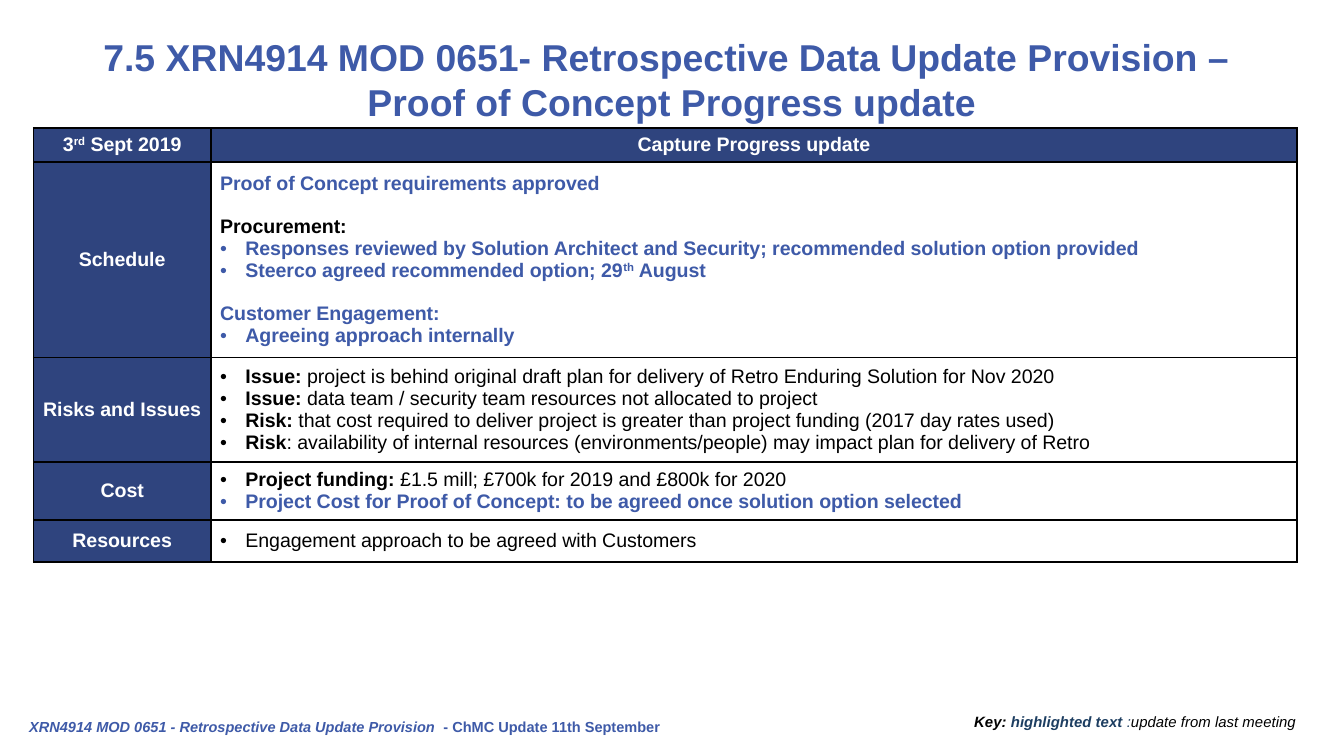
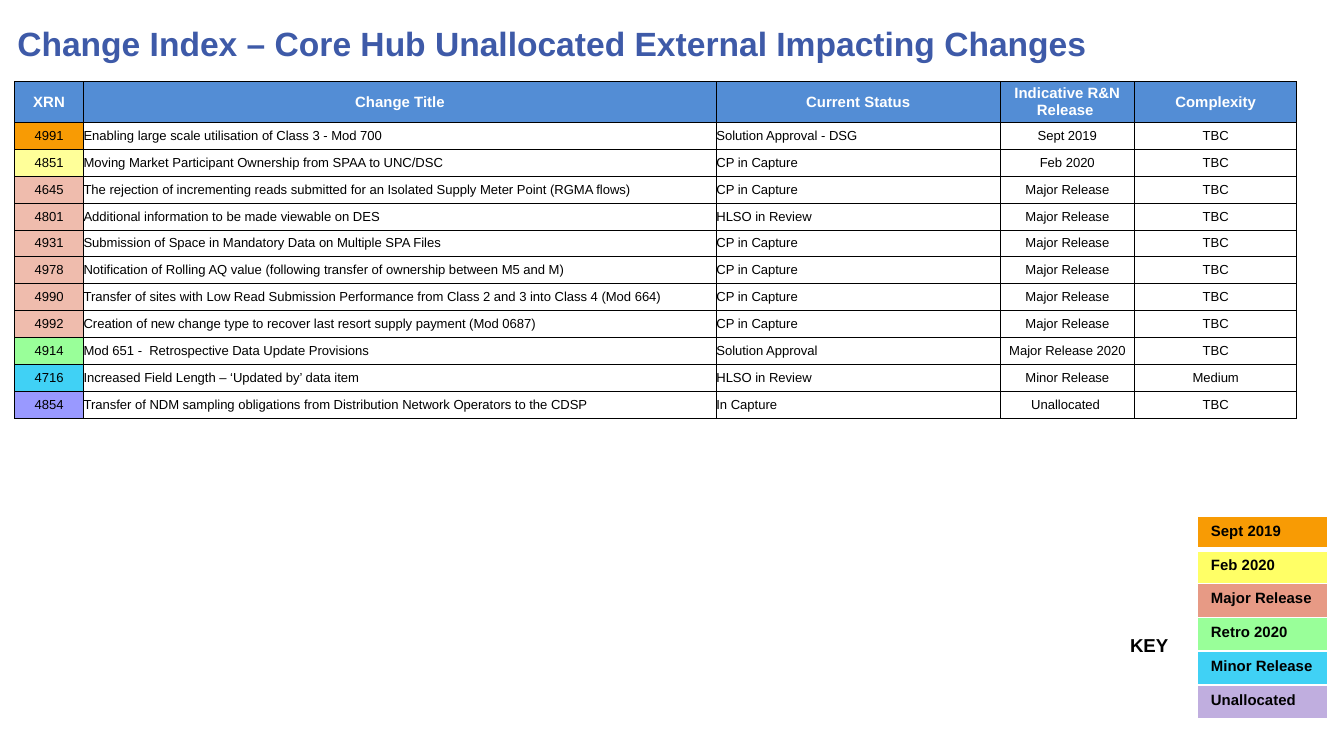
from lxml.etree import SubElement
from pptx import Presentation
from pptx.dml.color import RGBColor
from pptx.enum.text import MSO_ANCHOR, PP_ALIGN
from pptx.oxml.ns import qn
from pptx.util import Pt

hue = RGBColor.from_string
BLUE, NAVY, SKY = "3E5AA8", "2F447E", "538DD5"
BLACK, WHITE = "000000", "FFFFFF"
MID, TOP, LEFT = MSO_ANCHOR.MIDDLE, MSO_ANCHOR.TOP, PP_ALIGN.LEFT
CENTER = PP_ALIGN.CENTER
BOLD, SUP = {"bold": True}, {"sup": True}


def write(frame, runs, size, tint=BLACK, bold=None, align=LEFT, italic=None,
          bullet=False, gap=0):
    """Add a paragraph; runs is a string or a list of (text, style) pairs."""
    para = frame.add_paragraph() if frame.text else frame.paragraphs[0]
    para.alignment = align
    if gap:
        para.space_before = Pt(gap)
    if bullet:
        props = para._p.get_or_add_pPr()
        props.set("marL", str(Pt(13.5)))
        props.set("indent", str(Pt(-13.5)))
        SubElement(props, qn("a:buFont")).set("typeface", "Arial")
        SubElement(props, qn("a:buChar")).set("char", "•")
    font = para.font
    font.name, font.size = "Arial", Pt(size)
    font.bold, font.italic = bold, italic
    font.color.rgb = hue(tint)
    for text, style in [(runs, {})] if isinstance(runs, str) else runs:
        if text == "\n":
            para.add_line_break()
            continue
        run = para.add_run()
        run.text = text
        if "bold" in style:
            run.font.bold = style["bold"]
        if "italic" in style:
            run.font.italic = style["italic"]
        if "tint" in style:
            run.font.color.rgb = hue(style["tint"])
        if "sup" in style:
            run._r.get_or_add_rPr().set("baseline", "30000")


def grid(slide, left, top, cols, rows, line, width, pads, anchor):
    """Add an unfilled table with even borders; pads are side and top margins."""
    table = slide.shapes.add_table(len(rows), len(cols), Pt(left), Pt(top),
                                   Pt(sum(cols)), Pt(sum(rows))).table
    table.first_row = table.horz_banding = False
    for col, size in zip(table.columns, cols):
        col.width = Pt(size)
    for row, size in zip(table.rows, rows):
        row.height = Pt(size)
    for cell in table.iter_cells():
        cell.margin_left = cell.margin_right = Pt(pads[0])
        cell.margin_top = cell.margin_bottom = Pt(pads[1])
        cell.vertical_anchor = anchor
        props = cell._tc.get_or_add_tcPr()
        for side in ("a:lnL", "a:lnR", "a:lnT", "a:lnB"):
            edge = SubElement(props, qn(side), w=str(Pt(width)))
            fill = SubElement(edge, qn("a:solidFill"))
            SubElement(fill, qn("a:srgbClr")).set("val", line)
        cell.fill.background()
    return table


deck = Presentation()
deck.slide_width, deck.slide_height = Pt(720), Pt(405)
blank = deck.slide_layouts[6]
update, index = [deck.slides.add_slide(blank) for _ in range(2)]

# Titles, footers and labels: slide, place, anchor, wrap, runs, font
boxes = [
    (update, (36, 15, 648, 50.4), TOP, True,
     [("7.5 XRN4914 MOD 0651- Retrospective Data Update Provision – ", {}),
      ("\n", {}), ("Proof of Concept Progress update", {})],
     dict(size=20, tint=BLUE, bold=True, align=CENTER)),
    (update, (8.6, 378, 648, 22.3), MID, True,
     [("XRN4914 MOD 0651 - Retrospective Data Update Provision",
       {"italic": True}),
      ("  - ChMC Update 11th September", {})],
     dict(size=7.8, tint=BLUE, bold=True)),
    (update, (514.8, 378, 188.6, 17.3), TOP, False,
     [("Key: ", BOLD), ("highlighted text ", {"bold": True, "tint": "1D3E61"}),
      (":", {"tint": "1D3E61"}), ("update from last meeting", {})],
     dict(size=8, italic=True)),
    (index, (2.2, 2.2, 684, 41.8), MID, True,
     "Change Index – Core Hub Unallocated External Impacting Changes",
     dict(size=18, tint=BLUE, bold=True)),
    (index, (598.3, 336.2, 56.9, 19.4), TOP, True, "KEY",
     dict(size=10, bold=True)),
]
for slide, place, anchor, wrap, runs, font in boxes:
    frame = slide.shapes.add_textbox(*map(Pt, place)).text_frame
    frame.word_wrap, frame.vertical_anchor = wrap, anchor
    write(frame, runs, **font)

# Progress table: row label, then (runs, font) for each paragraph
news = dict(tint=BLUE, bold=True)
point = dict(bullet=True)
fresh = dict(news, bullet=True)
status = [
    ([("3", {}), ("rd", SUP), (" Sept 2019", {})],
     [("Capture Progress update", dict(tint=WHITE, bold=True, align=CENTER))]),
    ("Schedule", [
        ("Proof of Concept requirements approved", news),
        ("Procurement:", dict(bold=True, gap=11.6)),
        ("Responses reviewed by Solution Architect and Security; "
         "recommended solution option provided", fresh),
        ([("Steerco agreed recommended option; 29", {}), ("th", SUP),
          (" August", {})], fresh),
        ("Customer Engagement:", dict(news, gap=11.6)),
        ("Agreeing approach internally", fresh)]),
    ("Risks and Issues", [
        ([("Issue: ", BOLD), ("project is behind original draft plan for "
          "delivery of Retro Enduring Solution for Nov 2020", {})], point),
        ([("Issue: ", BOLD), ("data team / security team resources not "
          "allocated to project", {})], point),
        ([("Risk: ", BOLD), ("that cost required to deliver project is greater "
          "than project funding (2017 day rates used)", {})], point),
        ([("Risk", BOLD), (": availability of internal resources "
          "(environments/people) may impact plan for delivery of Retro", {})],
         point)]),
    ("Cost", [
        ([("Project funding: ", BOLD),
          ("£1.5 mill; £700k for 2019 and £800k for 2020", {})], point),
        ("Project Cost for Proof of Concept: to be agreed once solution "
         "option selected", fresh)]),
    ("Resources", [
        ("Engagement approach to be agreed with Customers", point)]),
]
table = grid(update, 18, 68.5, [95, 582], [17, 98, 52, 28.5, 22.5],
             BLACK, 1, (5, 2.9), MID)
for num, (label, paras) in enumerate(status):
    head, body = table.cell(num, 0), table.cell(num, 1)
    for cell in [head, body] if num == 0 else [head]:
        cell.fill.solid()
        cell.fill.fore_color.rgb = hue(NAVY)
    write(head.text_frame, label, 10.5, WHITE, True, CENTER)
    for runs, font in paras:
        write(body.text_frame, runs, 10.5, **font)

# Change table: the number's fill follows the release
tints = {"Sept 2019": "F89B04", "Feb 2020": "FFFF99", "Major Release": "EFBCAD",
         "Major Release 2020": "99FF99", "Minor Release": "40D1F5",
         "Unallocated": "9999FF"}
changes = [
    ("XRN", "Change Title", "Current Status", "Indicative R&N Release ",
     "Complexity"),
    ("4991", "Enabling large scale utilisation of Class 3 - Mod 700",
     "Solution Approval - DSG", "Sept 2019", "TBC"),
    ("4851", "Moving Market Participant Ownership from SPAA to UNC/DSC",
     "CP in Capture", "Feb 2020", "TBC"),
    ("4645", "The rejection of incrementing reads submitted for an Isolated "
     "Supply Meter Point (RGMA flows)",
     "CP in Capture", "Major Release", "TBC"),
    ("4801", "Additional information to be made viewable on DES",
     "HLSO in Review", "Major Release", "TBC"),
    ("4931", "Submission of Space in Mandatory Data on Multiple SPA Files",
     "CP in Capture", "Major Release", "TBC"),
    ("4978", "Notification of Rolling AQ value (following transfer of "
     "ownership between M5 and M)",
     "CP in Capture", "Major Release", "TBC"),
    ("4990", "Transfer of sites with Low Read Submission Performance from "
     "Class 2 and 3 into Class 4 (Mod 664)",
     "CP in Capture", "Major Release", "TBC"),
    ("4992", "Creation of new change type to recover last resort supply "
     "payment (Mod 0687)", "CP in Capture", "Major Release", "TBC"),
    ("4914", "Mod 651 -  Retrospective Data Update Provisions",
     "Solution Approval", "Major Release 2020", "TBC"),
    ("4716", "Increased Field Length – ‘Updated by’ data item",
     "HLSO in Review", "Minor Release", "Medium"),
    ("4854", "Transfer of NDM sampling obligations from Distribution Network "
     "Operators to the CDSP", "In Capture", "Unallocated ", "TBC"),
]
table = grid(index, 7.8, 43.8, [37, 339, 152, 72, 87], [21.8] + [14.4] * 11,
             BLACK, 0.5, (0, 0), MID)
for num, change in enumerate(changes):
    for col, text in enumerate(change):
        cell = table.cell(num, col)
        if num == 0 or col == 0:
            cell.fill.solid()
            cell.fill.fore_color.rgb = hue(tints[change[3].strip()] if num
                                           else SKY)
        if num == 0:
            write(cell.text_frame, text, 8, WHITE, True, CENTER)
        else:
            write(cell.text_frame, text, 7,
                  align=LEFT if col in (1, 2) else CENTER)

# Colour key
keys = [("Sept 2019", "F89B04"), ("Feb 2020", "FFFF66"),
        ("Major Release", "E79A85"), ("Retro 2020", "99FF99"),
        ("Minor Release", "40D1F5"), ("Unallocated", "C0AEDF")]
table = grid(index, 641.5, 276.5, [70], [18.1] * 6, WHITE, 1, (7.2, 3.6), TOP)
for num, (text, tint) in enumerate(keys):
    cell = table.cell(num, 0)
    cell.fill.solid()
    cell.fill.fore_color.rgb = hue(tint)
    write(cell.text_frame, text, 8, bold=True)
for num, side in enumerate(("a:lnB", "a:lnT")):
    table.cell(num, 0)._tc.tcPr.find(qn(side)).set("w", str(Pt(3)))

deck.save("out.pptx")
